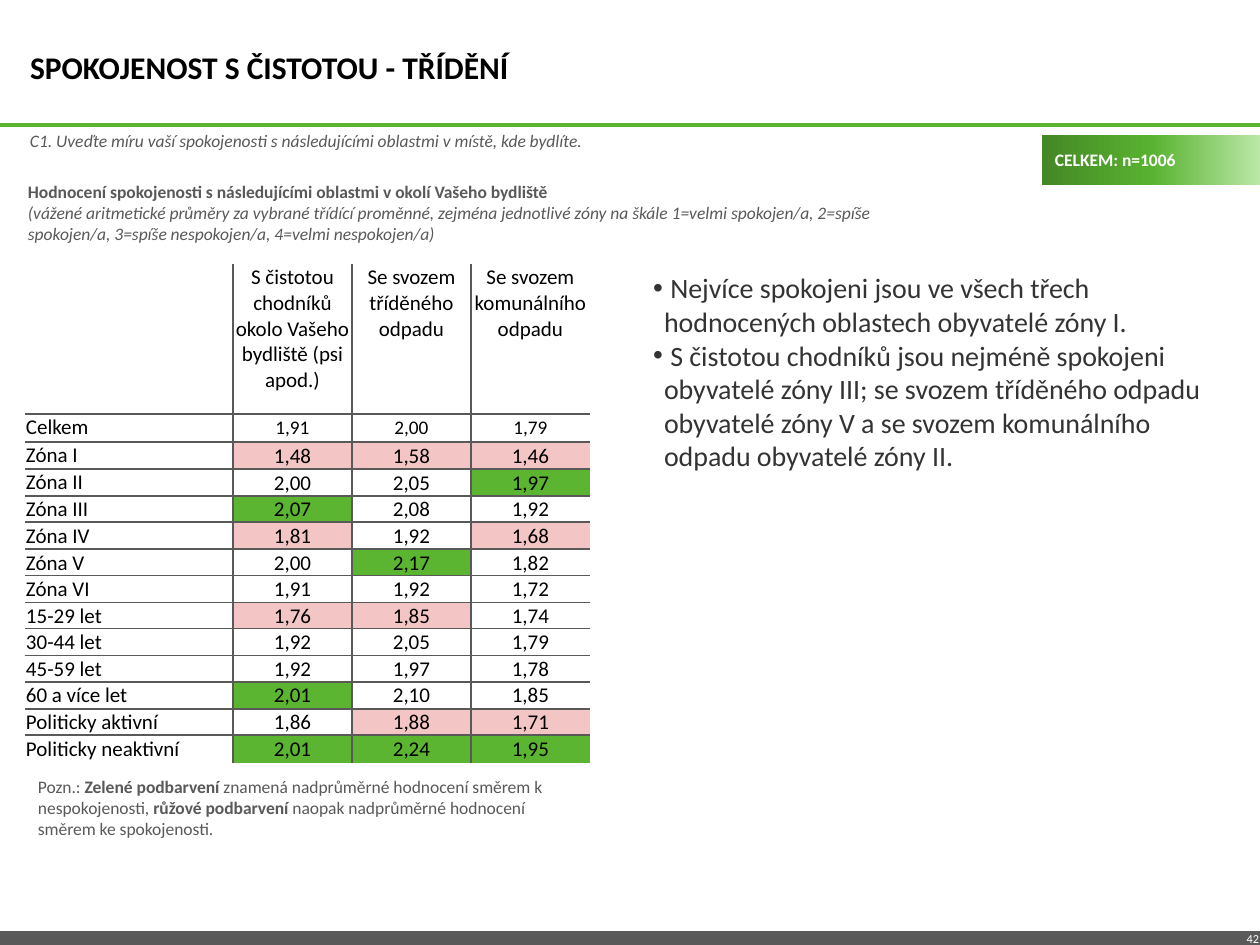
from copy import deepcopy

from lxml.etree import SubElement
from pptx import Presentation
from pptx.dml.color import RGBColor
from pptx.enum.shapes import MSO_CONNECTOR, MSO_SHAPE
from pptx.enum.text import MSO_ANCHOR, MSO_AUTO_SIZE, PP_ALIGN
from pptx.oxml.ns import qn
from pptx.util import Pt

SCALE = 914400 / 126
COLORS = {
    "green": "5BB531", "pink": "F3C6C5", "gray": "595959", "dark": "333333",
    "black": "000000", "white": "FFFFFF",
    "fade_start": "448825", "fade_middle": "58B230", "fade_end": "BBE7A7",
}
FILLS = {"g": "green", "p": "pink"}
SIDES = ("margin_left", "margin_top", "margin_right", "margin_bottom")
BODY_INSETS = (13, 6, 13, 6)
HEADING_INSETS = (5, 0, 5, 0)
CELL_INSETS = (1, 1, 1, 0)

COLUMN_WIDTHS = [208, 119, 119, 119]
ROW_HEIGHTS = [150, 28, 27] + [27, 26] * 5 + [28]
HEADINGS = [
    "S čistotou chodníků okolo Vašeho bydliště (psi apod.)",
    "Se svozem tříděného odpadu",
    "Se svozem komunálního odpadu",
]
RATINGS = [
    ("Celkem", "1,91 2,00 1,79", "---"),
    ("Zóna I", "1,48 1,58 1,46", "ppp"),
    ("Zóna II", "2,00 2,05 1,97", "--g"),
    ("Zóna III", "2,07 2,08 1,92", "g--"),
    ("Zóna IV", "1,81 1,92 1,68", "p-p"),
    ("Zóna V", "2,00 2,17 1,82", "-g-"),
    ("Zóna VI", "1,91 1,92 1,72", "---"),
    ("15-29 let", "1,76 1,85 1,74", "pp-"),
    ("30-44 let", "1,92 2,05 1,79", "---"),
    ("45-59 let", "1,92 1,97 1,78", "---"),
    ("60 a více let", "2,01 2,10 1,85", "g--"),
    ("Politicky aktivní", "1,86 1,88 1,71", "-pp"),
    ("Politicky neaktivní", "2,01 2,24 1,95", "ggg"),
]


def px(value):
    """Turn pixels into EMU."""
    return round(value * SCALE)


def rgb(name):
    """Look up a named colour."""
    return RGBColor.from_string(COLORS[name])


class SlideBuilder:
    """Hold the text style and the current page, and draw elements on it."""

    font_name = "Calibri"

    def __init__(self, page):
        """Start drawing on a page."""
        self.page = page

    def apply_font(self, font, color, **values):
        """Set the font from format values."""
        for name, value in {"name": self.font_name, **values}.items():
            setattr(font, name, value)
        font.color.rgb = rgb(color)

    def add_paragraphs(self, frame, paragraphs, size, color,
                       align=PP_ALIGN.LEFT, bullet=False):
        """Fill a text frame with paragraphs of (text, format) spans."""
        for index, spans in enumerate(paragraphs):
            para = frame.add_paragraph() if index else frame.paragraphs[0]
            para.alignment = align
            if bullet:
                properties = para._p.get_or_add_pPr()
                properties.set("marL", str(px(11)))
                properties.set("indent", str(px(-11)))
                SubElement(properties, qn("a:buFont"), typeface="Arial")
                SubElement(properties, qn("a:buChar"), char="•")
            for text, values in spans:
                span = para.add_run()
                span.text = text
                self.apply_font(span.font, color, size=Pt(size), **values)

    def frame(self, box, insets, anchor, auto_size=MSO_AUTO_SIZE.NONE):
        """Prepare the text frame of a shape."""
        values = {side: px(inset) for side, inset in zip(SIDES, insets)}
        values |= {"word_wrap": True, "auto_size": auto_size, "vertical_anchor": anchor}
        for name, value in values.items():
            setattr(box.text_frame, name, value)
        return box.text_frame

    def text(self, area, paragraphs, size, color, insets=BODY_INSETS,
             anchor=MSO_ANCHOR.TOP, grow=True, **layout):
        """Add a text box."""
        box = self.page.shapes.add_textbox(*map(px, area))
        auto_size = MSO_AUTO_SIZE.SHAPE_TO_FIT_TEXT if grow else MSO_AUTO_SIZE.NONE
        frame = self.frame(box, insets, anchor, auto_size)
        self.add_paragraphs(frame, paragraphs, size, color, **layout)

    def rule(self, y, color, width):
        """Add a horizontal line across the page."""
        line = self.page.shapes.add_connector(
            MSO_CONNECTOR.STRAIGHT, px(0), px(y), px(1260), px(y))
        line.line.color.rgb = rgb(color)
        line.line.width = Pt(width)
        SubElement(line._element.spPr, qn("a:effectLst"))

    def badge(self, area, label, stops):
        """Add a gradient rectangle with a bold label."""
        box = self.page.shapes.add_shape(MSO_SHAPE.RECTANGLE, *map(px, area))
        box.shadow.inherit = False
        box.line.fill.background()
        box.fill.gradient()
        box.fill.gradient_angle = 0
        stop_list = box._element.spPr.find(".//" + qn("a:gsLst"))
        stop_list.insert(1, deepcopy(stop_list[0]))
        for stop, (position, color) in zip(box.fill.gradient_stops, stops):
            stop.position = position
            stop.color.rgb = rgb(color)
        frame = self.frame(box, BODY_INSETS, MSO_ANCHOR.MIDDLE)
        self.add_paragraphs(frame, [[(label, {"bold": True})]], 10, "white")

    def borders(self, cell, visible):
        """Draw the listed sides of a cell and hide the others."""
        properties = cell._tc.get_or_add_tcPr()
        for side in "LRTB":
            line = SubElement(properties, qn(f"a:ln{side}"), w=str(Pt(1)))
            if side in visible:
                fill = SubElement(line, qn("a:solidFill"))
                SubElement(fill, qn("a:srgbClr"), val=COLORS["gray"])
            else:
                SubElement(line, qn("a:noFill"))

    def cell(self, cell, text, size, centered, middle, fill, insets):
        """Fill and format one table cell."""
        for side, inset in zip(SIDES, insets):
            setattr(cell, side, px(inset))
        cell.vertical_anchor = MSO_ANCHOR.MIDDLE if middle else MSO_ANCHOR.TOP
        if fill:
            cell.fill.solid()
            cell.fill.fore_color.rgb = rgb(fill)
        else:
            cell.fill.background()
        if text:
            align = PP_ALIGN.CENTER if centered else PP_ALIGN.LEFT
            self.add_paragraphs(cell.text_frame, [[(text, {})]], size, "black", align)

    def ratings_table(self, left, top):
        """Add the table of mean ratings with inner borders only."""
        rows = [("", HEADINGS, "---")]
        rows += [(label, values.split(), marks) for label, values, marks in RATINGS]
        table = self.page.shapes.add_table(
            len(rows), len(COLUMN_WIDTHS), px(left), px(top),
            px(sum(COLUMN_WIDTHS)), px(sum(ROW_HEIGHTS))).table
        table.first_row = table.horz_banding = False
        for column, width in zip(table.columns, COLUMN_WIDTHS):
            column.width = px(width)
        for r, (label, values, marks) in enumerate(rows):
            table.rows[r].height = px(ROW_HEIGHTS[r])
            for c, text in enumerate([label, *values]):
                cell = table.cell(r, c)
                edges = {"L": c > 0, "R": c < len(values),
                         "T": r > 0, "B": r < len(rows) - 1}
                self.borders(cell, [side for side, inner in edges.items() if inner])
                is_total = r == 1 and c > 0
                self.cell(cell, text, 11 if is_total else 12, c > 0, r > 0 and c > 0,
                          FILLS.get(marks[c - 1]) if c else None,
                          (0, 0, 0, 0) if is_total else CELL_INSETS)


def main():
    """Build the deck."""
    deck = Presentation()
    deck.slide_width, deck.slide_height = px(1260), px(945)
    builder = SlideBuilder(deck.slides.add_slide(deck.slide_layouts[6]))
    bold, italic = {"bold": True}, {"italic": True}

    builder.rule(125, "green", 2)
    builder.rule(939, "gray", 9)
    builder.text((1216, 931, 43, 10), [[("42", {})]], 7, "white",
                 insets=(0, 0, 0, 0), grow=False, align=PP_ALIGN.RIGHT)
    builder.text((25, 130, 1211, 21), [[(
        "C1. Uveďte míru vaší spokojenosti s následujícími oblastmi v místě, kde bydlíte.",
        italic)]], 10, "gray", insets=HEADING_INSETS)
    builder.text((25, 17, 992, 100), [[("SPOKOJENOST S ČISTOTOU - TŘÍDĚNÍ", bold)]],
                 18, "black", insets=HEADING_INSETS, anchor=MSO_ANCHOR.MIDDLE, grow=False)
    builder.badge((1042, 135, 218, 50), "CELKEM: n=1006",
                  [(0, "fade_start"), (0.5, "fade_middle"), (1, "fade_end")])
    builder.text((640, 265, 596, 251), [
        [(" Nejvíce spokojeni jsou ve všech třech hodnocených oblastech obyvatelé zóny I.", {})],
        [(" S čistotou chodníků jsou nejméně spokojeni obyvatelé zóny III; se svozem "
          "tříděného odpadu obyvatelé zóny V a se svozem komunálního odpadu "
          "obyvatelé zóny II.", {})],
    ], 16, "dark", bullet=True)
    builder.ratings_table(25, 264)
    builder.text((15, 175, 912, 77), [
        [("Hodnocení spokojenosti s následujícími oblastmi v okolí Vašeho bydliště", bold)],
        [("(vážené aritmetické průměry za vybrané třídící proměnné, zejména jednotlivé "
          "zóny na škále 1=velmi spokojen/a, 2=spíše spokojen/a, 3=spíše nespokojen/a, "
          "4=velmi nespokojen/a)", italic)],
    ], 10, "gray")
    builder.text((25, 770, 565, 77), [[
        ("Pozn.: ", {}),
        ("Zelené podbarvení ", bold),
        ("znamená nadprůměrné hodnocení směrem k nespokojenosti, ", {}),
        ("růžové podbarvení ", bold),
        ("naopak nadprůměrné hodnocení směrem ke spokojenosti.", {}),
    ]], 10, "gray")
    deck.save("out.pptx")


if __name__ == "__main__":
    main()
